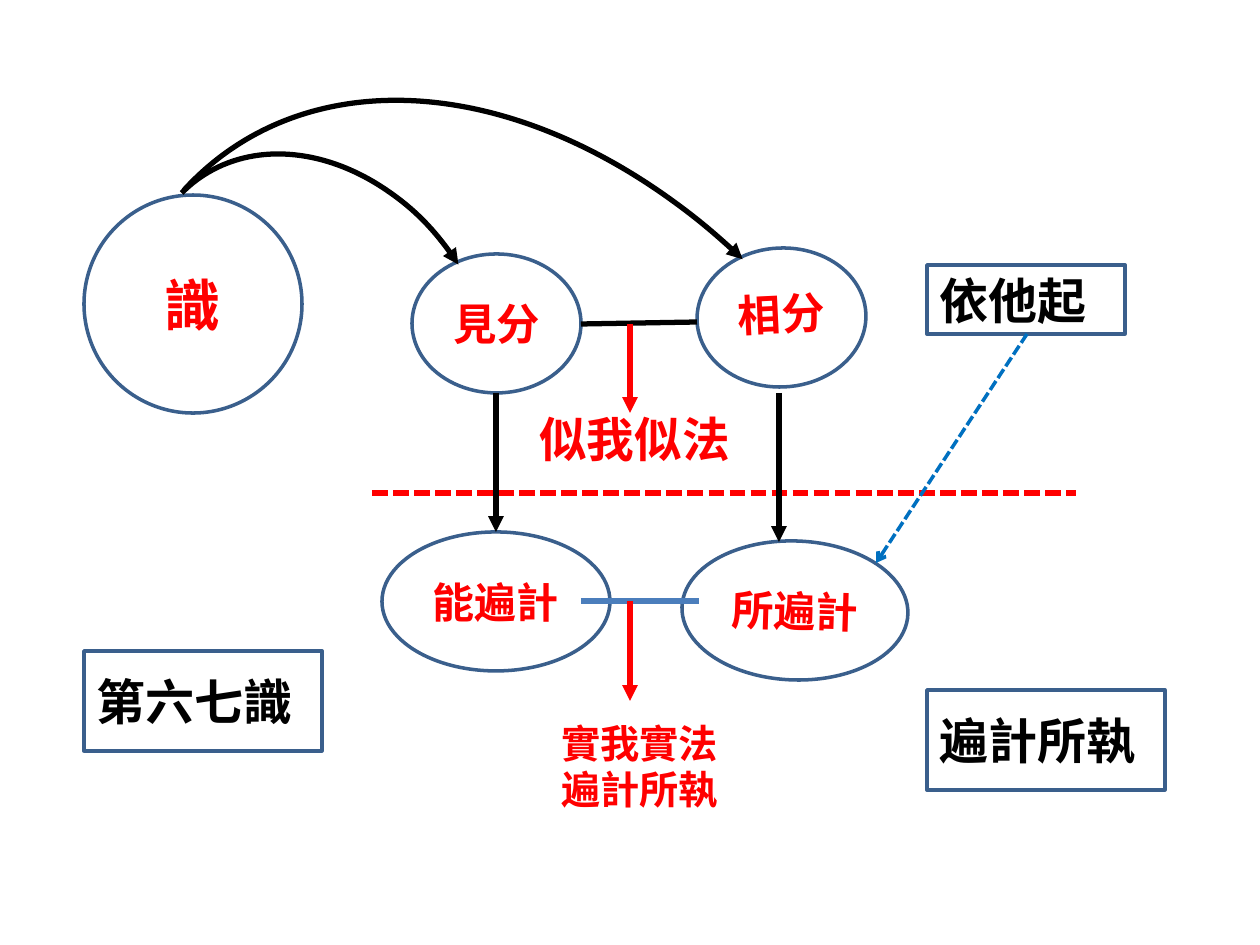
from pptx import Presentation, util as u
from pptx.dml.color import RGBColor
from pptx.enum import dml, shapes, text
from pptx.oxml import ns, xmlchemy

PX = 914400 / 126
RED, BLACK, NAVY = "FF0000", "000000", "3A5F8C"
DASH = dml.MSO_LINE.SQUARE_DOT


def outline(sp, color=None, width=2, dash=None, tail=None):
    if color:
        sp.line.color.rgb = RGBColor.from_string(color)
        sp.line.width = u.Pt(width)
    else:
        sp.line.fill.background()
    if dash:
        sp.line.dash_style = dash
    spPr = sp._element.spPr
    if tail:
        end = xmlchemy.OxmlElement("a:tailEnd")
        end.set("type", tail)
        spPr.find(ns.qn("a:ln")).append(end)
    spPr.append(xmlchemy.OxmlElement("a:effectLst"))


def write(sp, words, size=24, color=RED, align=text.PP_ALIGN.CENTER,
          spacing=1.0, before=0, margin=0):
    tf = sp.text_frame
    tf.word_wrap = True
    tf.vertical_anchor = text.MSO_ANCHOR.MIDDLE
    tf.margin_left = tf.margin_right = round(margin * PX)
    tf.text = words
    for p in tf.paragraphs:
        p.alignment = align
        p.line_spacing = spacing
        p.space_before = u.Pt(before)
        r = p.runs[0]
        r.font.name = "Calibri"
        r.font.size = u.Pt(size)
        r.font.bold = True
        r.font.color.rgb = RGBColor.from_string(color)


prs = Presentation()
prs.slide_width, prs.slide_height = round(1260 * PX), round(945 * PX)
s = prs.slides.add_slide(prs.slide_layouts[6])

ovals = [
    ("識", 84, 195, 218, 218, 0, NAVY, 32, 1.0, 0),
    ("見分", 412, 254, 169, 139, 0, NAVY, 24.8, 1.0, 5),
    ("相分", 697, 248, 169, 139, -2.8, NAVY, 24.8, 0.8, 5),
    ("能遍計", 382, 532, 228, 139, 0, NAVY, 24, 1.0, 5),
    ("所遍計", 682, 541, 226, 139, 1.8, NAVY, 24, 1.0, 5),
    ("實我實法\n遍計所執", 481, 701, 318, 139, 0, None, 22.4, 0.8, 4.5),
    ("似我似法", 481, 373, 307, 139, 0, None, 27.2, 0.9, 5.5),
]
for words, x, y, w, h, turn, color, size, spacing, before in ovals:
    box = [round(v * PX) for v in (x, y, w, h)]
    sp = s.shapes.add_shape(shapes.MSO_SHAPE.OVAL, *box)
    sp.rotation = turn
    sp.fill.background()
    outline(sp, color)
    write(sp, words, size=size, spacing=spacing, before=before)

labels = [
    ("依他起", 927, 265, 198, 69),
    ("遍計所執", 927, 690, 238, 100),
    ("第六七識", 84, 651, 238, 100),
]
for words, *box in labels:
    sp = s.shapes.add_shape(shapes.MSO_SHAPE.RECTANGLE, *[round(v * PX) for v in box])
    sp.fill.background()
    outline(sp, NAVY)
    write(sp, words, size=28, color=BLACK, align=text.PP_ALIGN.LEFT, margin=13)

arcs = [
    ((154, 141, 331, 427), 157.44, 0),
    ((152, 57, 767, 1099), 157.62, 200.23),
]
for box, start, stop in arcs:
    sp = s.shapes.add_shape(shapes.MSO_SHAPE.ARC, *[round(v * PX) for v in box])
    sp.adjustments[0], sp.adjustments[1] = start, stop
    sp.rotation = 327.1
    sp.fill.background()
    outline(sp, BLACK, 3, tail="triangle")

lines = [
    ((372, 493, 1076, 493), RED, 3, DASH, None),
    ((496, 393, 496, 532), BLACK, 3, None, "triangle"),
    ((779, 393, 779, 542), BLACK, 3, None, "triangle"),
    ((581, 601, 699, 601), "4B7EBC", 3, None, None),
    ((630, 601, 630, 701), RED, 3, None, "triangle"),
    ((581, 324, 697, 322), BLACK, 3, None, None),
    ((630, 324, 630, 413), RED, 3, None, "triangle"),
    ((1027, 334, 876, 563), "0070C0", 2, DASH, "arrow"),
]
for ends, color, width, dash, tail in lines:
    sp = s.shapes.add_connector(
        shapes.MSO_CONNECTOR.STRAIGHT, *[round(v * PX) for v in ends])
    outline(sp, color, width, dash, tail)

prs.save("out.pptx")
